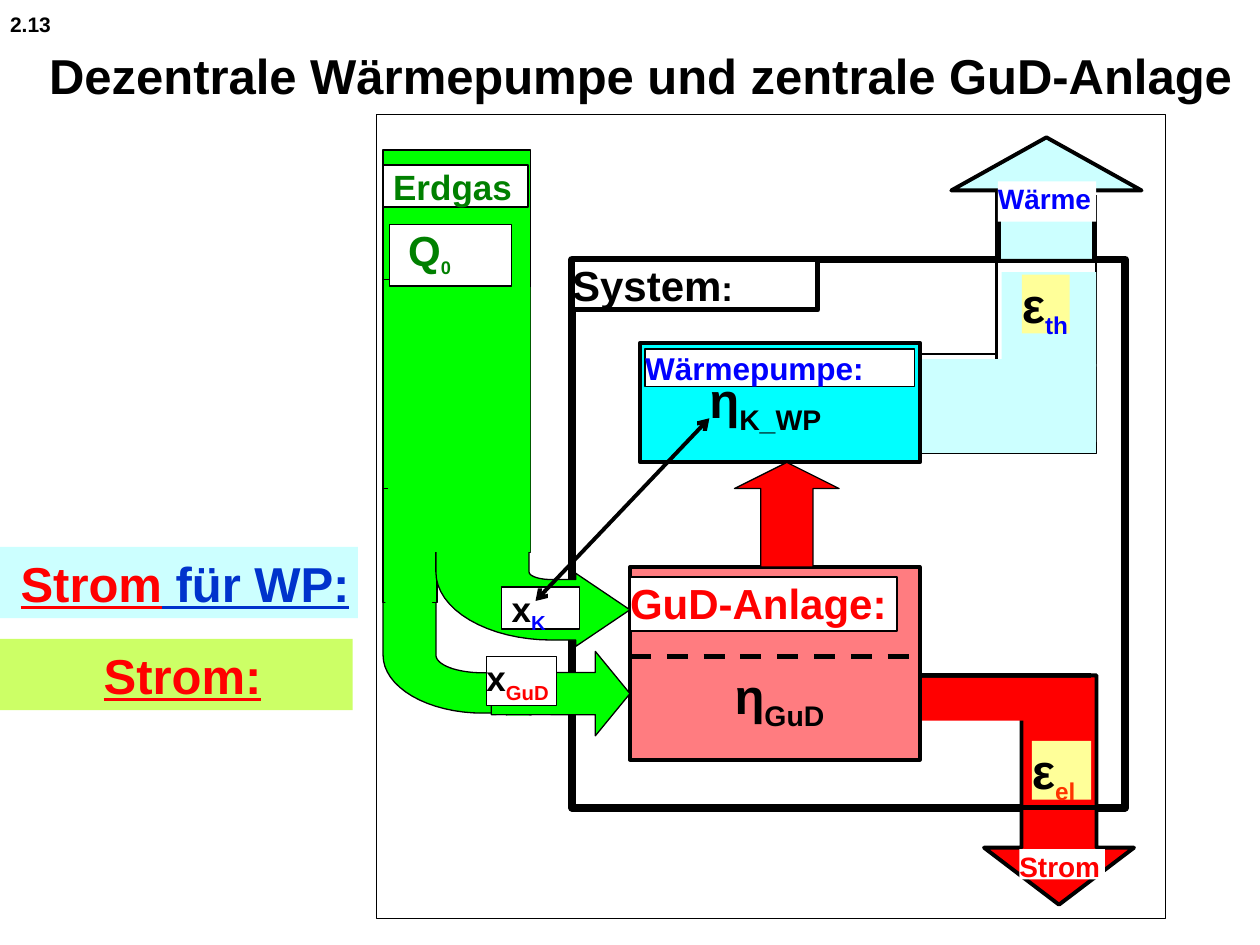
"""Build the slide on a decentralised heat pump fed by a central combined-cycle plant."""
import math

from lxml import etree
from pptx import Presentation
from pptx import util as u
from pptx.dml.color import RGBColor
from pptx.enum import dml, shapes, text
from pptx.oxml import ns

THEME = {
    "font": "Arial",
    "colors": {
        "black": "000000", "white": "FFFFFF", "red": "FF0000", "orange": "FF3300",
        "blue": "0000FF", "navy": "0033CC", "forest": "008000", "gas": "00FF00",
        "heat": "CCFFFF", "pump": "00FFFF", "plant": "FF7C80", "lime": "CCFF66",
        "yellow": "FFFF99",
    },
    "sizes": {"tiny": 12, "small": 16, "sub": 18, "body": 20, "label": 24, "title": 28},
    "weights": {"thin": 0.75, "medium": 1.5, "bold": 2.25, "heavy": 3, "frame": 4.5},
}
PRESETS = {
    "rect": shapes.MSO_SHAPE.RECTANGLE,
    "up": shapes.MSO_SHAPE.UP_ARROW,
    "down": shapes.MSO_SHAPE.DOWN_ARROW,
    "right": shapes.MSO_SHAPE.RIGHT_ARROW,
}
TAG = {"inset": (0.1, 0.05), "align": text.PP_ALIGN.CENTER}
ETA = {"inset": (0, 0.05)}
INDENT = {"inset": (0.08, 0)}
NO_WRAP = {"wrap": False}

TEXTS = {
    "title": ([("Dezentrale Wärmepumpe und zentrale GuD-Anlage", "title", "black")], NO_WRAP),
    "number": ([("2.13", "tiny", "black")], NO_WRAP),
    "system": ([("System", "label", "black"), (":", "body", "black")], {}),
    "pump": ([("Wärmepumpe:", "sub", "blue")], {}),
    "heat": ([("Wärme", "small", "blue")], {}),
    "power": ([("Strom", "small", "red")], {}),
    "plant": ([("GuD-Anlage:", "label", "red")], {}),
    "x_k": ([("x", "body", "black"), ("K", "body", "blue", "sub")], INDENT),
    "q_0": ([("Q", "label", "forest"), ("0", "sub", "forest", "sub")], {"inset": (0.15, 0)}),
    "gas": ([("Erdgas", "body", "forest")], INDENT),
    "tag_pump": ([("Strom", "title", "red", "line"), (" für WP:", "title", "navy", "line")], TAG),
    "tag_power": ([("Strom:", "title", "red", "line")], TAG),
    "eps_th": ([("ε", "title", "black"), ("th", "label", "blue", "sub")], {}),
    "eps_el": ([("ε", "title", "black"), ("el", "label", "orange", "sub")], {}),
    "eta_pump": ([("η", "title", "black"), ("K_WP", "title", "black", "sub")], ETA),
    "eta_plant": ([("η", "title", "black"), ("GuD", "title", "black", "sub")], ETA),
    "x_gud": ([("x", "body", "black"), ("GuD", "body", "red", "sub")], {}),
}

ITEMS = [
    ("rect", (2.99, 0.91, 6.26, 6.38), None, "thin"),
    ("rect", (4.54, 2.06, 4.39, 4.35), "white", "frame"),
    ("text", (0.39, 0.36, 9.41), "title"),
    ("vline", (8.7, 1.55, 1.96), "medium"),
    ("vline", (7.91, 1.51, 1.34), "medium"),
    ("down", (7.81, 5.36, 1.19, 1.82), "red", "bold", None, 0.38),
    ("hline", (7.16, 5.36, 1.5), "heavy"),
    ("rect", (6.92, 5.38, 1.74, 0.34), "red"),
    ("rect", (6.92, 3.16, 1.78, 0.44), "heat", "thin"),
    ("rect", (8.18, 2.89, 0.52, 0.62), "heat"),
    ("rect", (5.73, 2.85, 2.53, 0.32), "heat"),
    ("up", (7.55, 1.09, 1.51, 0.98), "heat", "bold", None, 0.43),
    ("rect", (4.54, 2.06, 1.95), "white", "heavy", "system"),
    ("hline", (6.92, 2.81, 0.99), "thin"),
    ("rect", (5.08, 2.72, 2.22, 0.95), "pump", "bold"),
    ("rect", (5.12, 2.77, 2.14), "white", "thin", "pump"),
    ("rect", (7.92, 1.44, 0.78, 0.32), "white", None, "heat"),
    ("rect", (8.09, 6.74, 0.68, 0.24), "white", None, "power"),
    ("rect", (7.95, 2.16, 0.75, 0.75), "heat"),
    ("hline", (8.1, 6.41, 0.62), "heavy"),
    ("rect", (5, 4.5, 2.3, 1.53), "plant", "bold"),
    ("rect", (5, 4.58, 2.12, 0.43), "white", "thin", "plant"),
    ("bend", (3.04, 4.69, 0.42, 4.45, 5.5, 0.32, 0.16), "gas", "thin"),
    ("rect", (3.04, 1.19, 1.17, 3.19), "gas", "thin"),
    ("rect", (3.04, 3.75, 0.43, 1.03), "gas", "thin"),
    ("rect", (3.04, 2.22, 0.43, 1.66), "gas", "thin"),
    ("bend", (3.46, 4.11, 0.74, 5, 4.84, 0.29, 0.24), "gas", "thin"),
    ("rect", (3.98, 4.66, 0.62), "white", "thin", "x_k"),
    ("rect", (3.09, 1.78, 0.97, 0.49), "white", "thin", "q_0"),
    ("rect", (3.04, 1.31, 1.15), "white", "thin", "gas"),
    ("rect", (3.08, 3.78, 0.34, 0.5), "gas"),
    ("rect", (3.33, 2.28, 0.88, 2.1), "gas"),
    ("rect", (0, 4.34, 2.84), "heat", None, "tag_pump"),
    ("rect", (0, 5.07, 2.8), "lime", None, "tag_power"),
    ("rect", (8.11, 2.18, 0.38), "yellow", None, "eps_th"),
    ("rect", (8.19, 5.88, 0.47), "yellow", None, "eps_el"),
    ("rect", (3.06, 4.7, 0.37, 0.16), "gas"),
    ("text", (5.63, 2.88, 1.12), "eta_pump"),
    ("rect", (3.86, 5.17, 0.43, 0.16), "white"),
    ("text", (5.83, 5.23, 0.91), "eta_plant"),
    ("right", (3.9, 5.17, 1.1, 0.67), "gas", "thin", None, 0.41),
    ("rect", (3.94, 5.68, 0.43, 0.16), "white"),
    ("rect", (3.86, 5.21, 0.56, 0.39), "white", "thin", "x_gud"),
    ("up", (5.83, 3.67, 0.83, 0.83), "red", "thin", None, 0.25),
    ("line", (4.25, 4.77, 5.63, 3.32), "bold", "arrows"),
    ("hline", (5, 5.21, 2.32), "heavy", "dash"),
    ("text", (0.08, 0.09, 0.33), "number"),
]


def color(name):
    return RGBColor.from_string(THEME["colors"][name])


def style(sp, fill, weight):
    sp.shadow.inherit = False
    if fill:
        sp.fill.solid()
        sp.fill.fore_color.rgb = color(fill)
    else:
        sp.fill.background()
    if weight:
        sp.line.color.rgb = color("black")
        sp.line.width = u.Pt(THEME["weights"][weight])
    else:
        sp.line.fill.background()


def frame(place, key):
    if len(place) == 3:
        runs, opts = TEXTS[key]
        line = 1.2 * THEME["sizes"][runs[0][1]] / 72
        place = (*place, line + 2 * opts.get("inset", (0, 0))[1])
    return map(u.Inches, place)


def write(sp, key):
    runs, opts = TEXTS[key]
    tf = sp.text_frame
    tf.word_wrap = opts.get("wrap", True)
    tf.vertical_anchor = text.MSO_ANCHOR.TOP
    side, top = opts.get("inset", (0, 0))
    tf.margin_left, tf.margin_top = u.Inches(side), u.Inches(top)
    tf.margin_right = tf.margin_bottom = 0
    p = tf.paragraphs[0]
    p.alignment = opts.get("align", text.PP_ALIGN.LEFT)
    for words, size, ink, *marks in runs:
        r = p.add_run()
        r.text = words
        r.font.name, r.font.bold = THEME["font"], True
        r.font.size = u.Pt(THEME["sizes"][size])
        r.font.color.rgb = color(ink)
        if "line" in marks:
            r.font.underline = True
        if "sub" in marks:
            r.font._element.set("baseline", "-25000")


def add_box(s, kind, place, fill, weight=None, key=None, head=None):
    sp = s.shapes.add_shape(PRESETS[kind], *frame(place, key))
    if head:
        sp.adjustments[1] = head
    style(sp, fill, weight)
    if key:
        write(sp, key)


def add_line(s, kind, place, weight, mark=None):
    if kind != "line":
        x, y, length = place
        place = (x, y, x + length, y) if kind == "hline" else (x, y, x, y + length)
    line = s.shapes.add_connector(shapes.MSO_CONNECTOR.STRAIGHT, *map(u.Inches, place))
    line.line.color.rgb = color("black")
    line.line.width = u.Pt(THEME["weights"][weight])
    if mark == "dash":
        line.line.dash_style = dml.MSO_LINE.DASH
    if mark == "arrows":
        for tag in ("a:headEnd", "a:tailEnd"):
            etree.SubElement(line.line._ln, ns.qn(tag), type="arrow")
    etree.SubElement(line._element.spPr, ns.qn("a:effectLst"))


def quarter(x, y, rx, ry, parts=16):
    angles = [math.pi / 2 * i / parts for i in range(parts + 1)]
    return [(x - rx * math.cos(a), y + ry * math.sin(a)) for a in angles]


def add_bend(s, place, fill, weight):
    left, top, width, tip_x, tip_y, head, shaft = place
    neck, turn_x, turn_y = tip_x - 0.43, tip_x - 0.62, tip_y - 0.3
    drop = tip_y - turn_y
    outer = quarter(turn_x, turn_y, turn_x - left, drop + shaft)
    inner = quarter(turn_x, turn_y, turn_x - left - width, drop - shaft)
    points = [(tip_x, tip_y), (neck, tip_y + head), (neck, tip_y + shaft), *outer[::-1],
              (left, top), (left + width, top), *inner,
              (neck, tip_y - shaft), (neck, tip_y - head)]
    spots = [(u.Inches(x), u.Inches(y)) for x, y in points]
    builder = s.shapes.build_freeform(*spots[0])
    builder.add_line_segments(spots[1:], close=True)
    style(builder.convert_to_shape(), fill, weight)


def main():
    prs = Presentation()
    prs.slide_width, prs.slide_height = u.Inches(10), u.Inches(7.5)
    s = prs.slides.add_slide(prs.slide_layouts[6])
    for kind, place, *rest in ITEMS:
        if kind in ("line", "hline", "vline"):
            add_line(s, kind, place, *rest)
        elif kind == "bend":
            add_bend(s, place, *rest)
        elif kind == "text":
            write(s.shapes.add_textbox(*frame(place, *rest)), *rest)
        else:
            add_box(s, kind, place, *rest)
    prs.save("out.pptx")


if __name__ == "__main__":
    main()
